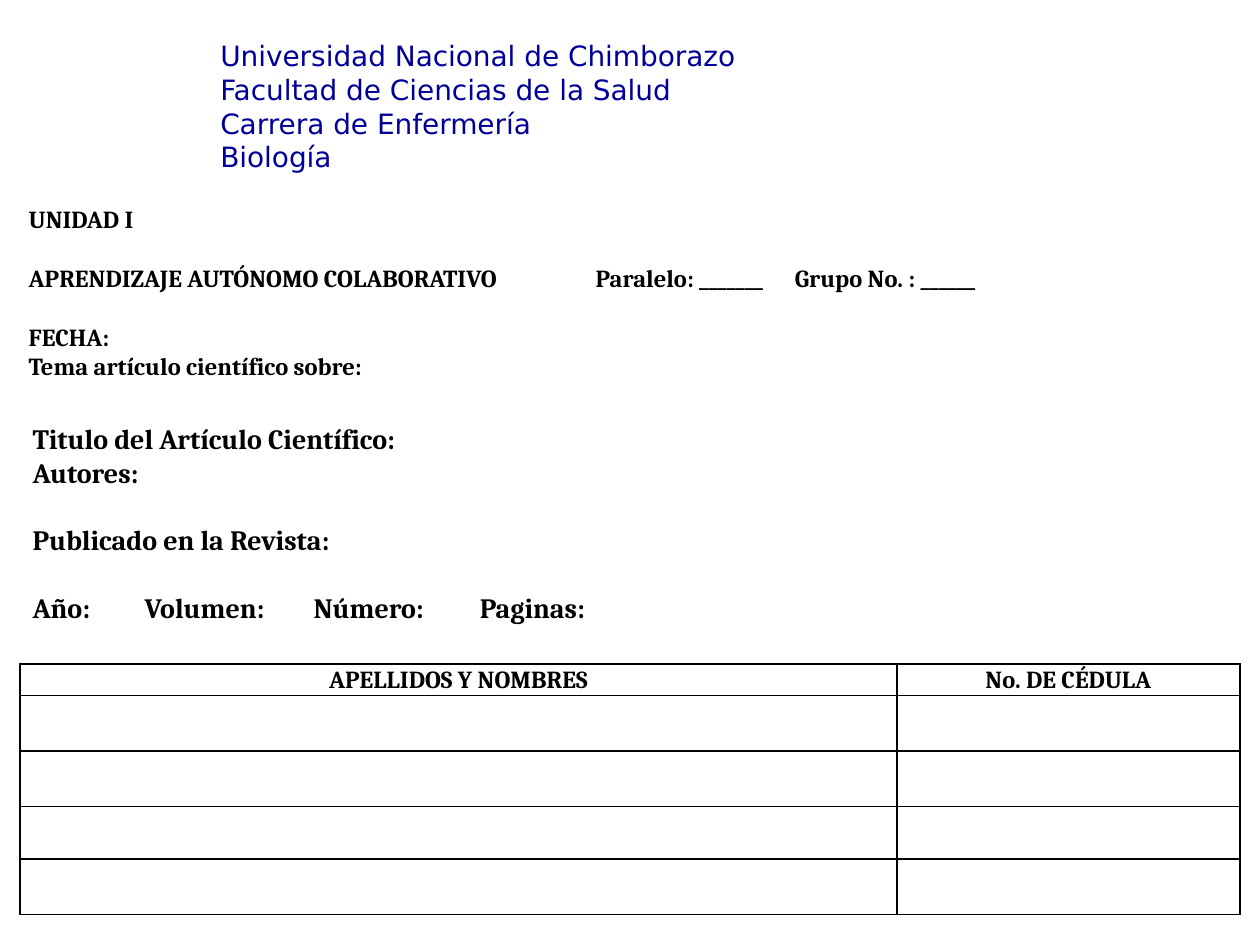
from lxml import etree
from pptx import Presentation
from pptx.dml.color import RGBColor
from pptx.enum.text import MSO_AUTO_SIZE, PP_ALIGN
from pptx.oxml.ns import qn
from pptx.util import Inches, Pt

CENTER = PP_ALIGN.CENTER
GROW = MSO_AUTO_SIZE.SHAPE_TO_FIT_TEXT
COLORS = {"blue": "000099", "black": "000000", "white": "FFFFFF"}
HEAD = {"name": "DejaVu Sans", "size": Pt(16), "bold": False}
BODY = {"name": "Cambria", "size": Pt(14), "bold": True}
LARGE = {**BODY, "size": Pt(16)}
SIDES = ("a:lnL", "a:lnR", "a:lnT", "a:lnB")


def grid(*cells):
    """Turn columns or rows of a 100 by 75 grid into lengths."""
    return [Inches(cell / 10) for cell in cells]


class Page:
    def __init__(self, deck):
        self.slide = deck.slides.add_slide(deck.slide_layouts[6])

    def add_run(self, para, text, style, color):
        run = para.add_run()
        run.text = text
        for key, value in style.items():
            setattr(run.font, key, value)
        run.font.color.rgb = RGBColor.from_string(COLORS[color])

    def tabs(self, para, stops):
        tab_list = etree.SubElement(para._p.get_or_add_pPr(), qn("a:tabLst"))
        for stop in stops:
            etree.SubElement(tab_list, qn("a:tab"), pos=str(Inches(stop)), algn="l")

    def text(self, area, lines, style, color="black", wrap=True):
        """Each line is its text, the space before it and its tab stops."""
        frame = self.slide.shapes.add_textbox(*grid(*area)).text_frame
        frame.word_wrap = wrap
        frame.auto_size = GROW
        for i, (text, gap, stops) in enumerate(lines):
            para = frame.add_paragraph() if i else frame.paragraphs[0]
            if stops:
                self.tabs(para, stops)
            if gap:
                para.space_before = Pt(gap)
            self.add_run(para, text, style, color)

    def border(self, cell):
        props = cell._tc.get_or_add_tcPr()
        for i, side in enumerate(SIDES):
            line = etree.Element(qn(side), w=str(Pt(1)))
            fill = etree.SubElement(line, qn("a:solidFill"))
            etree.SubElement(fill, qn("a:srgbClr"), val=COLORS["black"])
            props.insert(i, line)

    def table(self, area, heads, cols, rows):
        shape = self.slide.shapes.add_table(len(rows), len(cols), *grid(*area))
        table = shape.table
        table.horz_banding = False
        for col, width in zip(table.columns, grid(*cols)):
            col.width = width
        for row, height in zip(table.rows, grid(*rows)):
            row.height = height
        for cell in table.iter_cells():
            cell.margin_left = cell.margin_right = Inches(0.07)
            cell.margin_top = cell.margin_bottom = 0
            cell.fill.solid()
            cell.fill.fore_color.rgb = RGBColor.from_string(COLORS["white"])
            self.border(cell)
        for cell, head in zip(table.rows[0].cells, heads):
            para = cell.text_frame.paragraphs[0]
            para.alignment = CENTER
            para.line_spacing = 1.07
            self.add_run(para, head, BODY, "black")


def main():
    deck = Presentation()
    deck.slide_width, deck.slide_height = grid(100, 75)
    page = Page(deck)
    school = ("Universidad Nacional de Chimborazo", "Facultad de Ciencias de la Salud",
              "Carrera de Enfermería", "Biología")
    page.text((16.5, 2.6, 43.3, 11.8), [(line, 0, ()) for line in school],
              HEAD, "blue", wrap=False)
    page.text((1.3, 15.7, 97.3, 17.5), [
        ("UNIDAD I", 0, ()),
        ("APRENDIZAJE AUTÓNOMO COLABORATIVO\tParalelo: _______\tGrupo No. : ______",
         16.9, (4.5, 6.08)),
        ("FECHA:", 16.9, ()),
        ("Tema artículo científico sobre:", 0, ()),
    ], BODY)
    page.text((1.6, 33, 96.8, 17.2), [
        ("Titulo del Artículo Científico:", 0, ()),
        ("Autores:", 0, ()),
        ("Publicado en la Revista:", 19.3, ()),
        ("Año:\tVolumen:\tNúmero:\tPaginas:", 19.3, (0.89, 2.23, 3.55)),
    ], LARGE)
    page.table((1.6, 52.7, 96.8, 19.7), ("APELLIDOS Y NOMBRES", "No. DE CÉDULA"),
               (69.6, 27.2), (2.5, 4.4, 4.4, 4.2, 4.4))
    deck.save("out.pptx")


if __name__ == "__main__":
    main()
